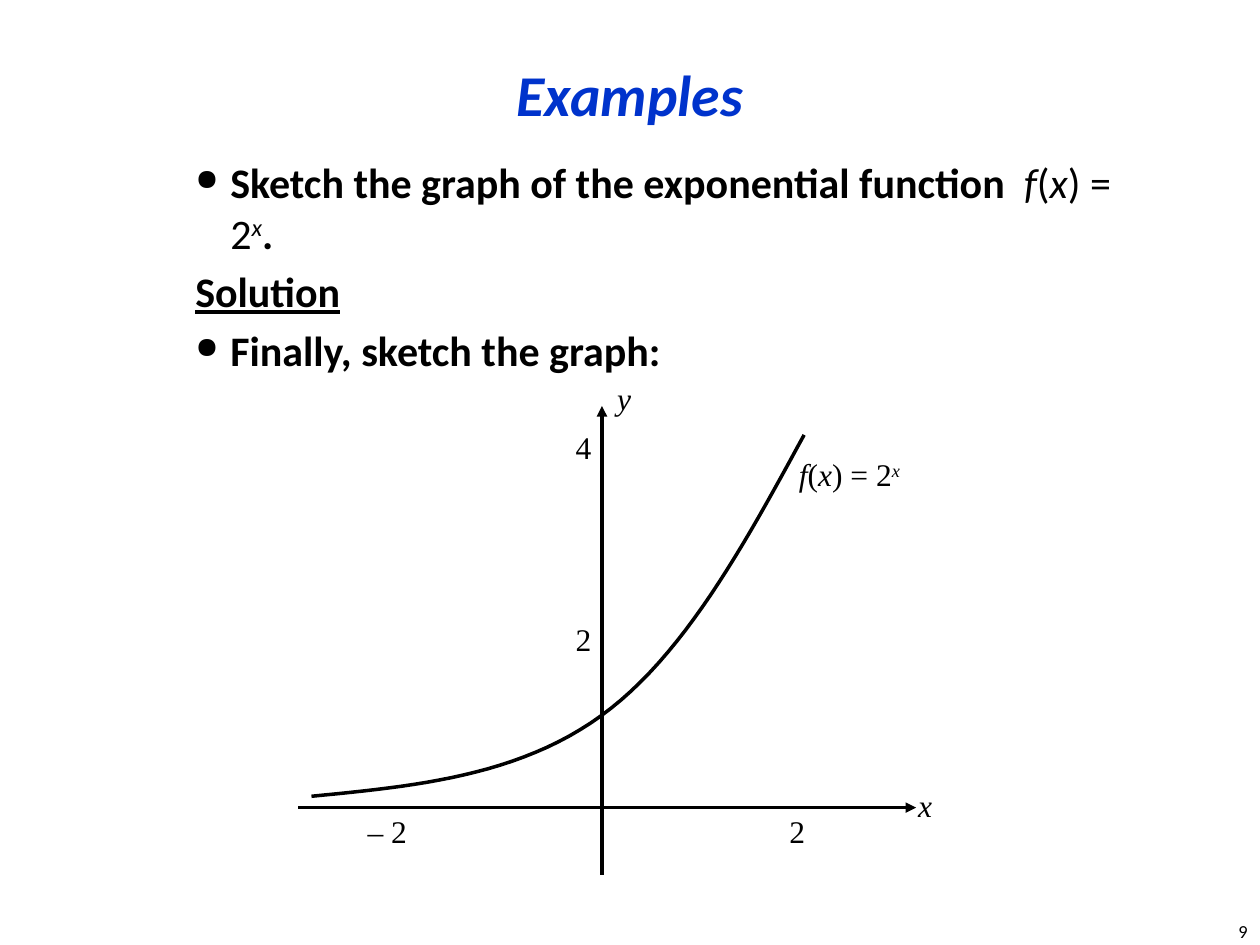
from dataclasses import dataclass

import pptx
import pptx.dml.color
import pptx.enum.shapes
import pptx.enum.text
import pptx.oxml.ns
import pptx.util
from lxml import etree

Pt = pptx.util.Pt
Align = pptx.enum.text.PP_ALIGN
Anchor = pptx.enum.text.MSO_ANCHOR


@dataclass(frozen=True)
class Theme:
    ink: str = "000000"
    accent: str = "0033CC"
    body_font: str = "Calibri"
    math_font: str = "Times New Roman"
    title_size: float = 33
    body_size: float = 24
    label_size: float = 18
    number_size: float = 10.5
    line_width: float = 2


def add_element(parent, tag, **attributes):
    values = {name: str(value) for name, value in attributes.items()}
    return etree.SubElement(parent, pptx.oxml.ns.qn(tag), values)


def exponential(bold=None):
    """Runs of f(x) = 2^x, each as text and style flags (b, i, u, ^)."""
    return [("f", "i"), ("(", ""), ("x", "i"), (") = 2", ""), ("x", "i^")]


def bezier(start, control_1, control_2, end, steps=24):
    """Points after the start along a cubic curve."""
    for step in range(1, steps + 1):
        t = step / steps
        weights = ((1 - t) ** 3, 3 * t * (1 - t) ** 2, 3 * t**2 * (1 - t), t**3)
        corners = (start, control_1, control_2, end)
        yield tuple(sum(w * c[axis] for w, c in zip(weights, corners)) for axis in (0, 1))


class SlideBuilder:
    def __init__(self, presentation, theme):
        self.theme = theme
        self.slide = presentation.slides.add_slide(presentation.slide_layouts[6])

    def color(self, value):
        return pptx.dml.color.RGBColor.from_string(value)

    def text(self, box, paragraphs, size, font, color=None, align=Align.LEFT,
             anchor=Anchor.TOP, space=0, bullets=(), hanging=0, tabs=()):
        """Each paragraph is a list of (text, flags) runs; space parts paragraphs."""
        shape = self.slide.shapes.add_textbox(*map(Pt, box))
        frame = shape.text_frame
        frame.word_wrap = True
        frame.vertical_anchor = anchor
        for index, runs in enumerate(paragraphs):
            paragraph = frame.add_paragraph() if index else frame.paragraphs[0]
            paragraph.alignment = align
            paragraph.space_before = Pt(space if index else 0)
            properties = paragraph._p.get_or_add_pPr()
            if hanging:
                properties.set("marL", str(Pt(hanging)))
                properties.set("indent", str(-Pt(hanging)))
            if index in bullets:
                add_element(properties, "a:buSzPct", val=70000)
                add_element(properties, "a:buChar", char="●")
            if tabs:
                tab_list = add_element(properties, "a:tabLst")
                for position in tabs:
                    add_element(tab_list, "a:tab", pos=Pt(position), algn="l")
            paragraph.font.size = Pt(size)
            paragraph.font.name = font
            paragraph.font.color.rgb = self.color(color or self.theme.ink)
            for content, flags in runs:
                run = paragraph.add_run()
                run.text = content
                run.font.bold = "b" in flags
                run.font.italic = "i" in flags
                run.font.underline = "u" in flags
                if "^" in flags:
                    run._r.get_or_add_rPr().set("baseline", "30000")

    def label(self, box, *paragraphs, **options):
        self.text(box, paragraphs, self.theme.label_size, self.theme.math_font, **options)

    def style_line(self, shape):
        shape.line.color.rgb = self.color(self.theme.ink)
        shape.line.width = Pt(self.theme.line_width)

    def axis(self, start, end):
        connector = self.slide.shapes.add_connector(
            pptx.enum.shapes.MSO_CONNECTOR.STRAIGHT, *map(Pt, start + end))
        self.style_line(connector)
        add_element(connector.line._get_or_add_ln(), "a:tailEnd", type="triangle")
        add_element(connector._element.spPr, "a:effectLst")

    def curve(self, start, *segments):
        points = [start]
        for segment in segments:
            points.extend(bezier(points[-1], *segment))
        pen = self.slide.shapes.build_freeform(*map(Pt, start))
        pen.add_line_segments([tuple(map(Pt, point)) for point in points[1:]], close=False)
        shape = pen.convert_to_shape()
        shape.fill.background()
        shape.shadow.inherit = False
        self.style_line(shape)


def main():
    presentation = pptx.Presentation()
    presentation.slide_width, presentation.slide_height = Pt(720), Pt(540)
    theme = Theme()
    builder = SlideBuilder(presentation, theme)

    builder.text((36, 0, 648, 106.5), [[("Examples", "bi")]], theme.title_size,
                 theme.body_font, theme.accent, Align.CENTER, Anchor.MIDDLE)
    task = [("Sketch the graph of the exponential function  ", "b"),
            *exponential(), (".", "b")]
    builder.text((104.5, 86, 546, 404.5),
                 [task, [("Solution", "bu")], [("Finally, sketch the graph:", "b")]],
                 theme.body_size, theme.body_font, space=4.8, bullets=(0, 2), hanging=20)

    origin_x, origin_y = 344, 461.5
    builder.axis((origin_x, 500), (origin_x, 232))
    builder.axis((170.5, origin_y), (523.5, origin_y))
    builder.label((517.5, 445.5, 34.5, 29), [("x", "i")])
    builder.label((345.5, 213, 34.5, 29), [("y", "i")])
    builder.label((138, 460.5, 386, 29), [("\t– 2\t2", "")], tabs=(65, 306))
    builder.label((309.5, 241, 35.5, 119.5), [("4", "")], [("2", "")],
                  align=Align.RIGHT, space=88)
    builder.curve((178, 455),
                  ((237, 449.3), (296, 443.5), (343.5, 409)),
                  ((390.5, 375), (425, 312), (459.5, 248.5)))
    builder.label((449.5, 256.5, 121.5, 29), exponential())

    builder.text((570, 522, 150, 18), [[("9", "")]], theme.number_size,
                 theme.body_font, align=Align.RIGHT)
    presentation.save("out.pptx")


if __name__ == "__main__":
    main()
